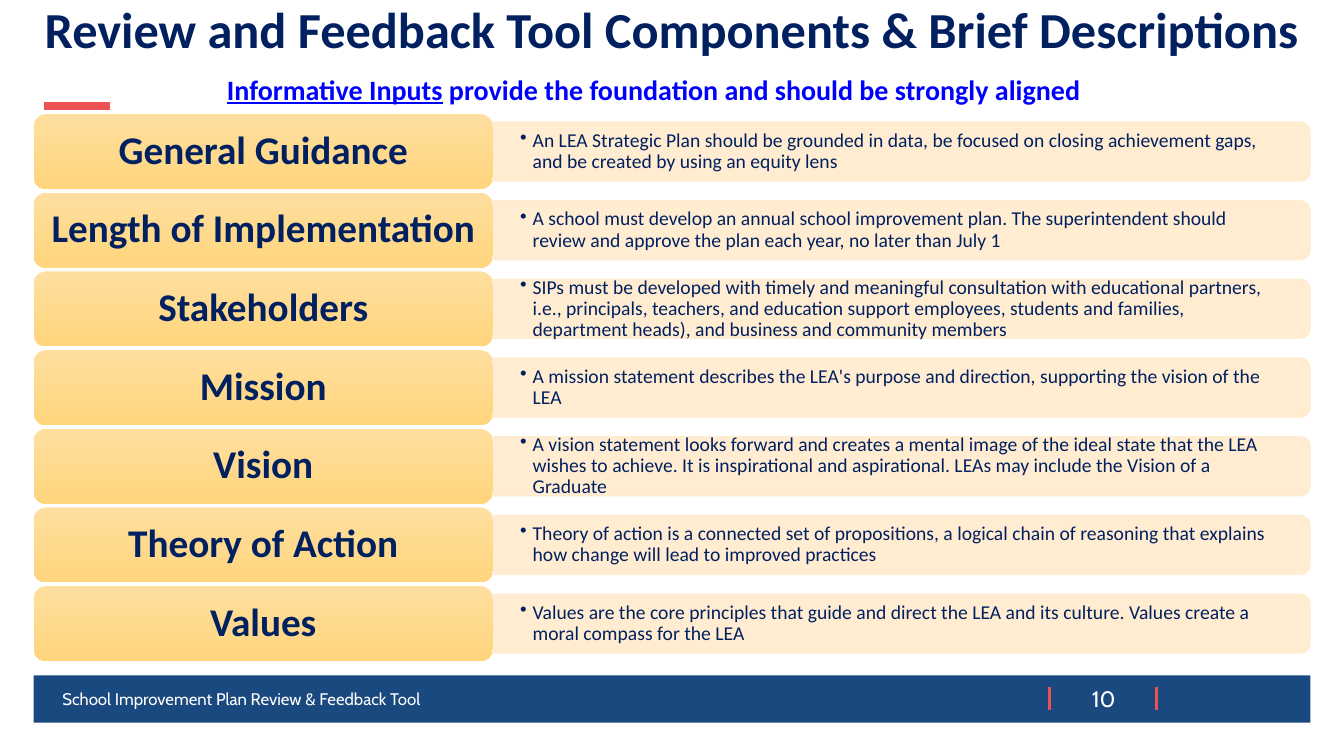
import pptx
import pptx.util
import pptx.dml.color
import pptx.enum.shapes
import pptx.enum.text
import pptx.oxml.ns
import lxml.etree

Pt = pptx.util.Pt
RGBColor = pptx.dml.color.RGBColor
Shape = pptx.enum.shapes.MSO_SHAPE
Align = pptx.enum.text.PP_ALIGN
Anchor = pptx.enum.text.MSO_ANCHOR
qn = pptx.oxml.ns.qn

# Content
TITLE = "Review and Feedback Tool Components & Brief Descriptions"
SUBTITLE = ("Informative Inputs", " provide the foundation and should be strongly aligned")
FOOTER = "School Improvement Plan Review & Feedback Tool"
PAGE_NUMBER = "10"
COMPONENTS = [
    ("General Guidance",
     "An LEA Strategic Plan should be grounded in data, be focused on closing "
     "achievement gaps, and be created by using an equity lens"),
    ("Length of Implementation",
     "A school must develop an annual school improvement plan. The superintendent "
     "should review and approve the plan each year, no later than July 1"),
    ("Stakeholders",
     "SIPs must be developed with timely and meaningful consultation with educational "
     "partners, i.e., principals, teachers, and education support employees, students "
     "and families, department heads), and business and community members"),
    ("Mission",
     "A mission statement describes the LEA's purpose and direction, supporting the "
     "vision of the LEA"),
    ("Vision",
     "A vision statement looks forward and creates a mental image of the ideal state "
     "that the LEA wishes to achieve. It is inspirational and aspirational. LEAs may "
     "include the Vision of a Graduate"),
    ("Theory of Action",
     "Theory of action is a connected set of propositions, a logical chain of reasoning "
     "that explains how change will lead to improved practices"),
    ("Values",
     "Values are the core principles that guide and direct the LEA and its culture. "
     "Values create a moral compass for the LEA"),
]

# Style
NAVY = RGBColor(0x00, 0x20, 0x60)
BLUE = RGBColor(0x00, 0x00, 0xFF)
BAR_BLUE = RGBColor(0x1A, 0x49, 0x7F)
RED = RGBColor(0xEC, 0x51, 0x53)
WHITE = RGBColor(0xFF, 0xFF, 0xFF)
CREAM = RGBColor(0xFF, 0xEB, 0xCC)
GOLD_TOP = RGBColor(0xFF, 0xDF, 0x9F)
GOLD_BOTTOM = RGBColor(0xFF, 0xD5, 0x7D)

# Layout, in points
LEFT, WIDTH = 24, 912
ROW_TOP, ROW_PITCH = 81.5, 56.2
LABEL_WIDTH, LABEL_HEIGHT = 328, 53.5
PANEL_WIDTH, PANEL_HEIGHT = 584, 42.5
BULLET_INDENT = 9


def set_frame(frame, anchor, side=7.2, edge=3.6):
    frame.word_wrap = True
    frame.vertical_anchor = anchor
    frame.margin_left = frame.margin_right = Pt(side)
    frame.margin_top = frame.margin_bottom = Pt(edge)
    return frame.paragraphs[0]


def add_span(para, text, size, color, font="Calibri", bold=False, underline=False):
    span = para.add_run()
    span.text = text
    span.font.name = font
    span.font.size = Pt(size)
    span.font.color.rgb = color
    span.font.bold = bold
    span.font.underline = underline


def add_text_box(page, left, top, width, height, anchor=Anchor.MIDDLE, side=7.2, edge=3.6):
    box = page.shapes.add_textbox(Pt(left), Pt(top), Pt(width), Pt(height))
    return set_frame(box.text_frame, anchor, side, edge)


def add_plain_shape(page, kind, left, top, width, height):
    shape = page.shapes.add_shape(kind, Pt(left), Pt(top), Pt(width), Pt(height))
    shape.shadow.inherit = False
    shape.line.fill.background()
    return shape


def add_red_line(page, x1, y1, x2, y2, weight):
    line = page.shapes.add_connector(
        pptx.enum.shapes.MSO_CONNECTOR.STRAIGHT, Pt(x1), Pt(y1), Pt(x2), Pt(y2))
    line.line.color.rgb = RED
    line.line.width = Pt(weight)
    lxml.etree.SubElement(line._element.spPr, qn("a:effectLst"))


def add_panel(page, left, middle):
    # A quarter turn puts the two rounded corners on the right
    panel = add_plain_shape(page, Shape.ROUND_2_SAME_RECTANGLE,
                            left + (PANEL_WIDTH - PANEL_HEIGHT) / 2,
                            middle - PANEL_WIDTH / 2, PANEL_HEIGHT, PANEL_WIDTH)
    panel.rotation = 90
    panel.fill.solid()
    panel.fill.fore_color.rgb = CREAM
    panel.line.color.rgb = CREAM
    panel.line.width = Pt(0.5)
    for color in panel._element.spPr.iter(qn("a:srgbClr")):
        lxml.etree.SubElement(color, qn("a:alpha"), val="90000")


def add_description(page, text, left, middle):
    height = 39
    para = add_text_box(page, left, middle - height / 2, 582, height, side=19.5, edge=10)
    properties = para._p.get_or_add_pPr()
    properties.set("marL", str(Pt(BULLET_INDENT)))
    properties.set("indent", str(-Pt(BULLET_INDENT)))
    lxml.etree.SubElement(properties, qn("a:buChar"), char="•")
    para.line_spacing = 0.9
    add_span(para, text, 14, NAVY)


def add_label(page, text, middle):
    label = add_plain_shape(page, Shape.ROUNDED_RECTANGLE, LEFT,
                            middle - LABEL_HEIGHT / 2, LABEL_WIDTH, LABEL_HEIGHT)
    label.fill.gradient()
    label.fill.gradient_angle = 270
    for stop, color in zip(label.fill.gradient_stops, (GOLD_TOP, GOLD_BOTTOM)):
        stop.color.rgb = color
    para = set_frame(label.text_frame, Anchor.MIDDLE, side=9)
    para.alignment = Align.CENTER
    para.line_spacing = 0.9
    add_span(para, text, 28, NAVY, bold=True)


def main():
    deck = pptx.Presentation()
    deck.slide_width, deck.slide_height = Pt(960), Pt(540)
    page = deck.slides.add_slide(deck.slide_layouts[5])

    # Title, accent and subtitle
    title = page.shapes.title
    title.left, title.top, title.width, title.height = Pt(LEFT), Pt(0), Pt(WIDTH), Pt(55.5)
    para = set_frame(title.text_frame, Anchor.TOP, side=3.6)
    para.alignment = Align.CENTER
    para.line_spacing = 0.9
    add_span(para, TITLE, 36, NAVY, bold=True)

    add_red_line(page, 31.2, 75.6, 78.7, 75.6, 6)

    para = add_text_box(page, 11, 42.5, WIDTH, 39.5, Anchor.TOP)
    para.alignment = Align.CENTER
    para.line_spacing = 1.23
    for index, text in enumerate(SUBTITLE):
        add_span(para, text, 20, BLUE, bold=True, underline=index == 0)

    # Component rows
    for index, (name, description) in enumerate(COMPONENTS):
        middle = ROW_TOP + index * ROW_PITCH + LABEL_HEIGHT / 2
        add_panel(page, LEFT + LABEL_WIDTH, middle)
        add_description(page, description, LEFT + LABEL_WIDTH, middle)
        add_label(page, name, middle)

    # Footer bar
    bar = add_plain_shape(page, Shape.RECTANGLE, LEFT, 482.4, WIDTH, 33.8)
    bar.fill.solid()
    bar.fill.fore_color.rgb = BAR_BLUE
    for x in (749.5, 825.8):
        add_red_line(page, x, 491, x, 507, 2.25)
    para = add_text_box(page, 765.4, 486, 46, 26.6)
    para.alignment = Align.CENTER
    add_span(para, PAGE_NUMBER, 16, WHITE, "Cabin")
    para = add_text_box(page, 37.4, 484.6, 610, 28.8)
    add_span(para, FOOTER, 12, WHITE, "Cabin")

    deck.save("out.pptx")


if __name__ == "__main__":
    main()
